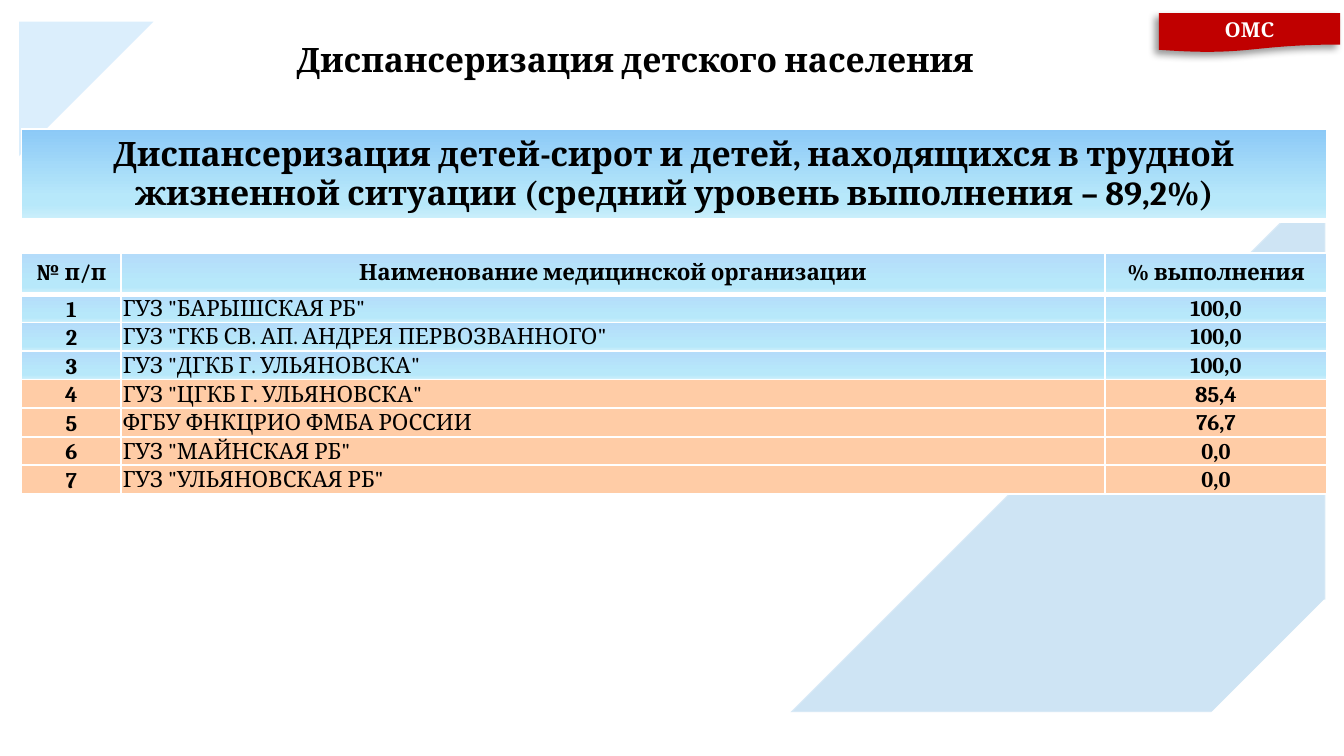
"""Build the slide on medical check-ups of children."""
from lxml import etree
from pptx import Presentation
from pptx.dml.color import RGBColor
from pptx.enum.shapes import MSO_SHAPE
from pptx.enum.text import MSO_ANCHOR, PP_ALIGN
from pptx.oxml import parse_xml
from pptx.oxml.ns import nsdecls, qn
from pptx.util import Cm, Pt

TRIANGLE, RIBBON = MSO_SHAPE.RIGHT_TRIANGLE, MSO_SHAPE.FLOWCHART_DOCUMENT
CENTER, LEFT = PP_ALIGN.CENTER, PP_ALIGN.LEFT
MIDDLE, BOTTOM = MSO_ANCHOR.MIDDLE, MSO_ANCHOR.BOTTOM

FONT = "Cambria"
BLACK, WHITE, RED, ORANGE = "000000", "FFFFFF", "C00000", "FFCCA6"
BANNER_TOP, TABLE_TOP = "8CC9F7", "B4DCFA"

TITLE = "Диспансеризация детского населения"
BADGE = "ОМС"
BANNER = ("Диспансеризация детей-сирот и детей, находящихся в трудной "
          "жизненной ситуации (средний уровень выполнения – 89,2%)")
HEADINGS = ("№ п/п", "Наименование медицинской организации", "% выполнения")
RESULTS = [
    ('ГУЗ "БАРЫШСКАЯ РБ"', "100,0"),
    ('ГУЗ "ГКБ СВ. АП. АНДРЕЯ ПЕРВОЗВАННОГО"', "100,0"),
    ('ГУЗ "ДГКБ Г. УЛЬЯНОВСКА"', "100,0"),
    ('ГУЗ "ЦГКБ Г. УЛЬЯНОВСКА"', "85,4"),
    ("ФГБУ ФНКЦРИО ФМБА РОССИИ", "76,7"),
    ('ГУЗ "МАЙНСКАЯ РБ"', "0,0"),
    ('ГУЗ "УЛЬЯНОВСКАЯ РБ"', "0,0"),
]
FULL = "100,0"
CORNERS = [
    (14.94, 3.35, 10.11, 270, "0D79CA", 20, True),
    (22.5, 11.35, 2.54, 270, WHITE, 100, True),
    (0.36, 0.41, 2.54, 90, "4FADF3", 20, False),
]
TABLE_LEFT = 0.41
COLUMNS = (1.88, 18.59, 4.2)
HEADER_HEIGHT, ROW_HEIGHT = 0.78, 0.53
WIDE_MARGINS, TIGHT_MARGINS = (0.18, 0, 0.18, 0), (0.03, 0.03, 0.03, 0)
BANNER_MARGINS = (0.25, 0.13, 0.25, 0.13)


def rgb(color):
    return RGBColor.from_string(color)


def set_alpha(fill, percent):
    color = fill._xPr.find(".//" + qn("a:srgbClr"))
    etree.SubElement(color, qn("a:alpha")).set("val", str(percent * 1000))


def write(frame, text, size, color=BLACK, bold=True, align=CENTER):
    frame.text = text
    frame.word_wrap = True
    paragraph = frame.paragraphs[0]
    paragraph.alignment = align
    font = paragraph.runs[0].font
    font.name, font.size, font.bold = FONT, Pt(size), bold
    font.color.rgb = rgb(color)


def set_margins(target, margins):
    (target.margin_left, target.margin_top,
     target.margin_right, target.margin_bottom) = map(Cm, margins)


def add_corner(slide, left, top, side, turn, color, opacity, outlined):
    corner = slide.shapes.add_shape(TRIANGLE, Cm(left), Cm(top), Cm(side), Cm(side))
    corner.rotation = turn
    corner.shadow.inherit = False
    fills = [corner.fill]
    corner.fill.solid()
    corner.fill.fore_color.rgb = rgb(color)
    if outlined:
        corner.line.width = Pt(1.25)
        corner.line.color.rgb = rgb(WHITE)
        fills.append(corner.line.fill)
    else:
        corner.line.fill.background()
    for fill in fills:
        set_alpha(fill, opacity)


def add_badge(slide):
    badge = slide.shapes.add_shape(RIBBON, Cm(21.9), Cm(0.25), Cm(3.43), Cm(0.74))
    badge.fill.solid()
    badge.fill.fore_color.rgb = rgb(RED)
    badge.line.fill.background()
    badge._element.spPr.append(parse_xml(
        f'<a:effectLst {nsdecls("a")}><a:outerShdw blurRad="50800" dist="38100" '
        f'dir="8100000"><a:srgbClr val="{BLACK}"><a:alpha val="40000"/></a:srgbClr>'
        '</a:outerShdw></a:effectLst>'))
    write(badge.text_frame, BADGE, 11, WHITE)
    set_margins(badge.text_frame, (0.18, 0.08, 0.18, 0.08))
    badge.text_frame.vertical_anchor = MIDDLE


def add_plain_table(slide, top, widths, heights):
    frame = slide.shapes.add_table(len(heights), len(widths), Cm(TABLE_LEFT), Cm(top),
                                   Cm(sum(widths)), Cm(sum(heights)))
    table = frame.table
    table.first_row = table.horz_banding = False
    for column, width in zip(table.columns, widths):
        column.width = Cm(width)
    for row, height in zip(table.rows, heights):
        row.height = Cm(height)
    return table


def style_cell(cell, margins, anchor, color, gradient, above=1, below=1):
    set_margins(cell, margins)
    cell.vertical_anchor = anchor
    properties = cell._tc.get_or_add_tcPr()
    for side, width in zip("LRTB", (1, 1, above, below)):
        properties.append(parse_xml(
            f'<a:ln{side} {nsdecls("a")} w="{Pt(width)}"><a:solidFill>'
            f'<a:srgbClr val="{WHITE}"/></a:solidFill></a:ln{side}>'))
    if gradient:
        stops = ((0, color), (74, "B7E8FA"), (83, "B7E8FA"), (100, "CFF0FB"))
        marks = "".join(f'<a:gs pos="{place * 1000}"><a:srgbClr val="{shade}"/></a:gs>'
                        for place, shade in stops)
        properties.append(parse_xml(
            f'<a:gradFill {nsdecls("a")} rotWithShape="1"><a:gsLst>{marks}</a:gsLst>'
            '<a:lin ang="5400000" scaled="0"/></a:gradFill>'))
    else:
        cell.fill.solid()
        cell.fill.fore_color.rgb = rgb(color)


def add_banner(slide):
    cell = add_plain_table(slide, 2.44, [sum(COLUMNS)], [1.55]).cell(0, 0)
    write(cell.text_frame, BANNER, 18)
    style_cell(cell, BANNER_MARGINS, MIDDLE, BANNER_TOP, True, below=3)


def add_results(slide):
    heights = [HEADER_HEIGHT] + [ROW_HEIGHT] * len(RESULTS)
    table = add_plain_table(slide, 4.78, COLUMNS, heights)
    for index, heading in enumerate(HEADINGS):
        cell = table.cell(0, index)
        write(cell.text_frame, heading, 12)
        style_cell(cell, WIDE_MARGINS, MIDDLE, TABLE_TOP, True, below=3)
    for number, (clinic, percent) in enumerate(RESULTS, 1):
        complete = percent == FULL
        color = TABLE_TOP if complete else ORANGE
        above = 3 if number == 1 else 1
        entries = (
            (str(number), True, CENTER, WIDE_MARGINS, BOTTOM),
            (clinic, False, LEFT, TIGHT_MARGINS, MIDDLE),
            (percent, True, CENTER, TIGHT_MARGINS, MIDDLE),
        )
        for index, (text, bold, align, margins, anchor) in enumerate(entries):
            cell = table.cell(number, index)
            write(cell.text_frame, text, 12, bold=bold, align=align)
            style_cell(cell, margins, anchor, color, complete, above)


def main():
    deck = Presentation()
    deck.slide_width, deck.slide_height = Cm(25.4), Cm(14.29)
    slide = deck.slides.add_slide(deck.slide_layouts[6])
    for corner in CORNERS:
        add_corner(slide, *corner)
    add_banner(slide)
    add_badge(slide)
    title = slide.shapes.add_textbox(Cm(3.3), Cm(0.61), Cm(17.42), Cm(1.02))
    write(title.text_frame, TITLE, 18)
    add_results(slide)
    deck.save("out.pptx")


if __name__ == "__main__":
    main()
